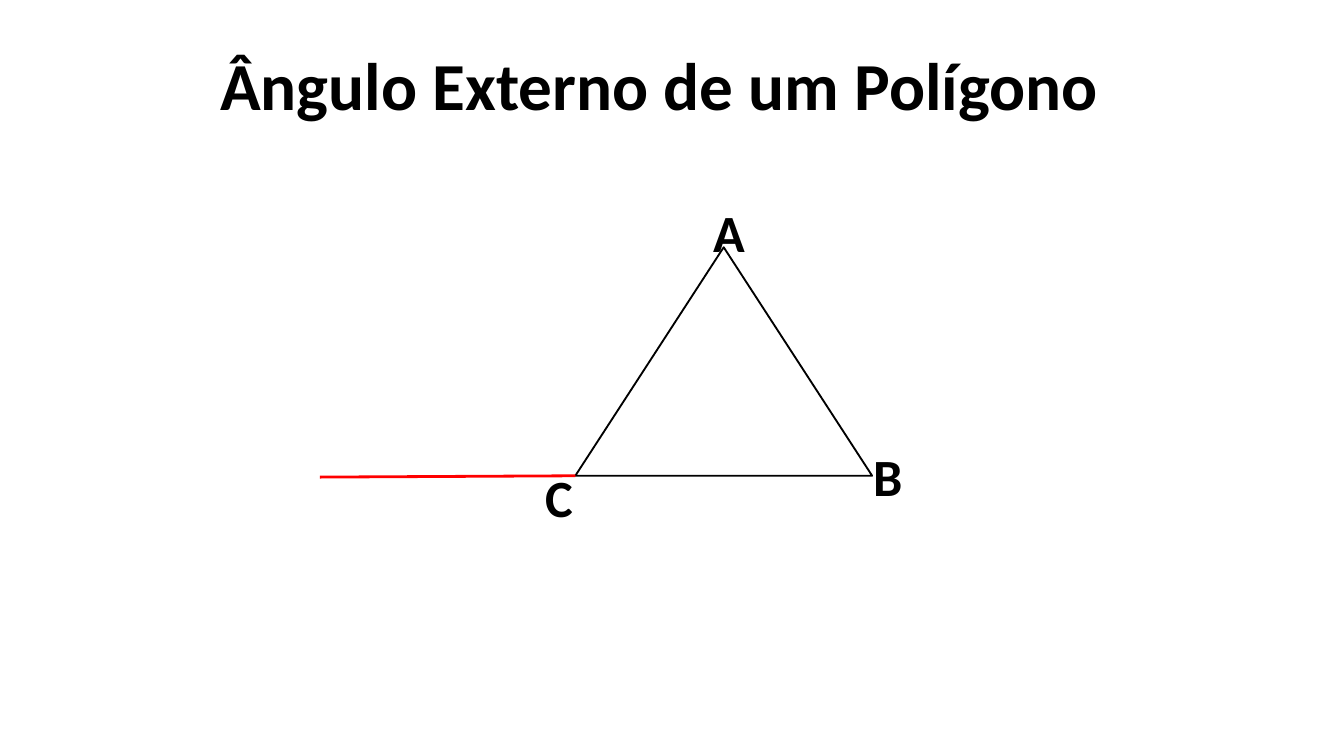
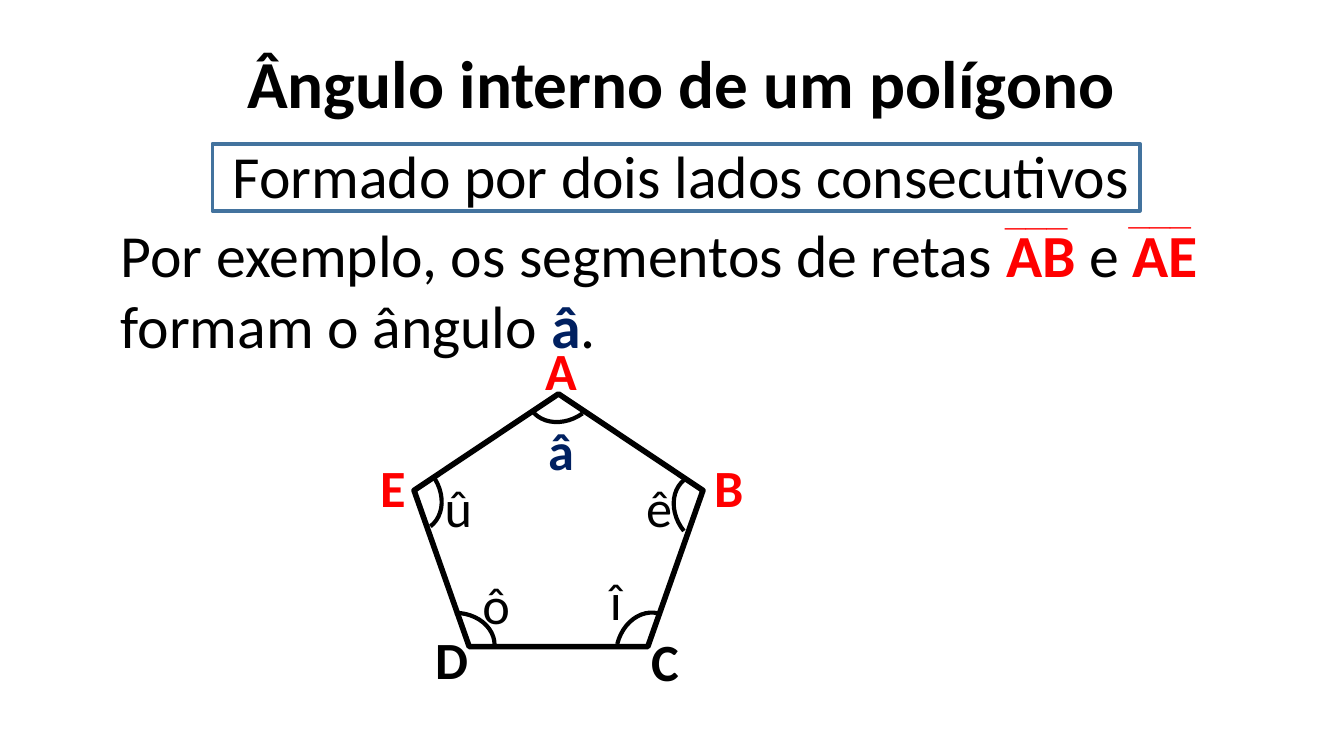
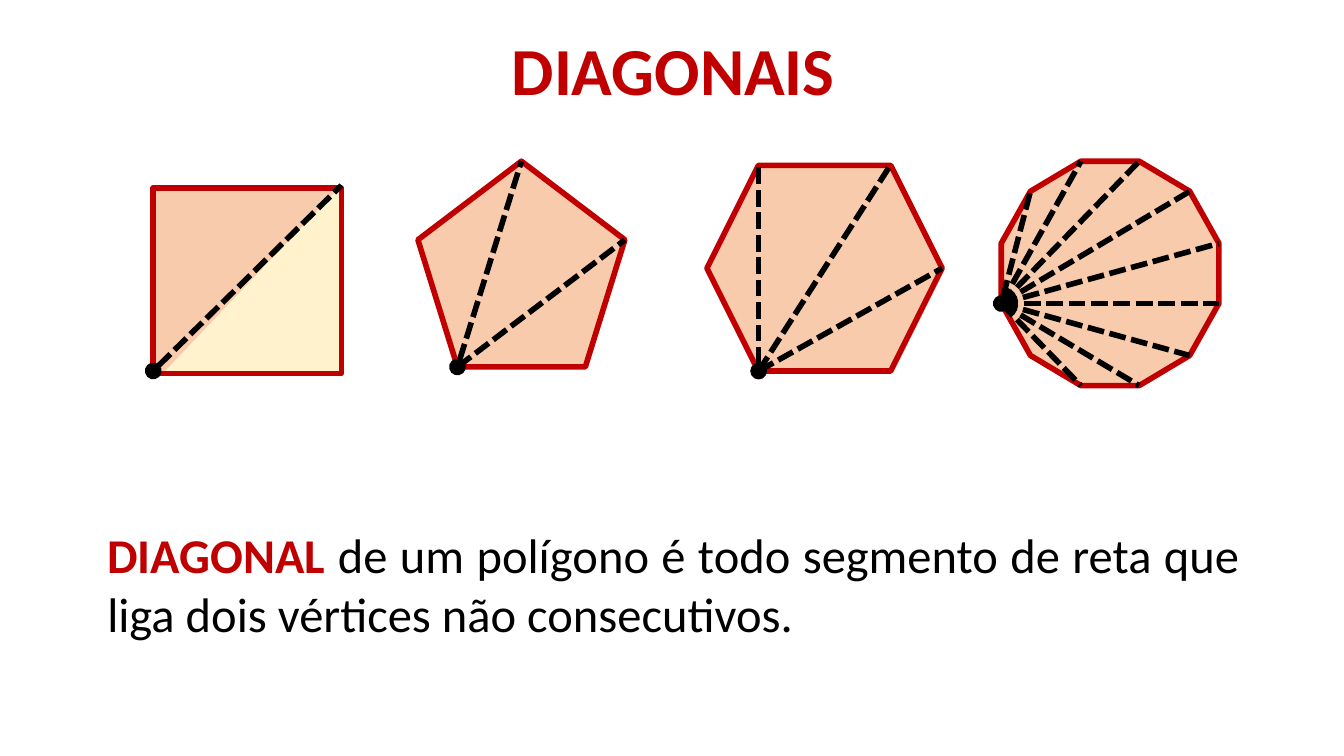
from lxml.etree import SubElement
from pptx import Presentation
from pptx.dml.color import RGBColor
from pptx.enum.dml import MSO_LINE
from pptx.enum.shapes import MSO_CONNECTOR, MSO_SHAPE
from pptx.enum.text import MSO_ANCHOR, MSO_AUTO_SIZE, PP_ALIGN
from pptx.oxml.ns import qn
from pptx.util import Pt

BLACK, RED, NAVY = "000000", "FF0000", "002060"
DARK_RED, PEACH, CREAM, BLUE = "C00000", "F8CBAD", "FFF2CC", "43739E"
TITLE_ONLY = 5
LABEL_HEIGHT = 41


def color(value):
    return RGBColor.from_string(value)


def points(lengths):
    return [Pt(length) for length in lengths]


def set_values(target, values):
    for name, value in values.items():
        setattr(target, name, value)


class Deck:
    """Holds the shared style and the current slide."""

    font = {"name": "Calibri", "size": Pt(28), "bold": False}
    title_font = {"size": Pt(36), "bold": True}
    frame = {"auto_size": MSO_AUTO_SIZE.SHAPE_TO_FIT_TEXT, "vertical_anchor": MSO_ANCHOR.TOP,
             "margin_left": Pt(7.2), "margin_right": Pt(7.2),
             "margin_top": Pt(3.6), "margin_bottom": Pt(3.6)}

    def __init__(self):
        self.presentation = Presentation()
        set_values(self.presentation, {"slide_width": Pt(720), "slide_height": Pt(405)})
        self.slide = None

    def fill_text(self, shape, runs, align=PP_ALIGN.LEFT, wrap=True, **font):
        """Fill a shape with one paragraph of (text, format) runs."""
        set_values(shape.text_frame, {**self.frame, "word_wrap": wrap})
        paragraph = shape.text_frame.paragraphs[0]
        set_values(paragraph, {"alignment": align, "line_spacing": 1.0})
        for text, changes in runs:
            values = {**self.font, **font, **changes}
            fill = values.pop("color", BLACK)
            outline = values.pop("outline", None)
            run = paragraph.add_run()
            run.text = text
            set_values(run.font, values)
            run.font.color.rgb = color(fill)
            if outline:
                self.outline(run, outline)

    def outline(self, run, value):
        properties = run.font._element
        line = SubElement(properties, qn("a:ln"), w=str(Pt(0.75)))
        fill = SubElement(line, qn("a:solidFill"))
        SubElement(fill, qn("a:srgbClr"), val=value)
        properties.insert(0, line)

    def new_slide(self, title, box, align=PP_ALIGN.CENTER, wrap=True, **font):
        layout = self.presentation.slide_layouts[TITLE_ONLY]
        self.slide = self.presentation.slides.add_slide(layout)
        shape = self.slide.shapes.title
        set_values(shape, dict(zip(("left", "top", "width", "height"), points(box))))
        self.fill_text(shape, [(title, font)], align, wrap, **self.title_font)

    def text(self, box, runs, align=PP_ALIGN.LEFT, wrap=True, **font):
        shape = self.slide.shapes.add_textbox(*points(box))
        self.fill_text(shape, runs, align, wrap, **font)

    def label(self, letter, left, top, width, **font):
        self.text((left, top, width, LABEL_HEIGHT), [(letter, font)], wrap=False)

    def shape(self, kind, box, line=None, width=1, fill=None, rotation=0):
        shape = self.slide.shapes.add_shape(kind, *points(box))
        shape.shadow.inherit = False
        shape.rotation = rotation
        for part, value in ((shape.fill, fill), (shape.line.fill, line)):
            if value:
                part.solid()
                part.fore_color.rgb = color(value)
            else:
                part.background()
        if line:
            shape.line.width = Pt(width)
        return shape

    def line(self, start, end, value, width, dash=None, dot=False):
        connector = self.slide.shapes.add_connector(
            MSO_CONNECTOR.STRAIGHT, *points((*start, *end)))
        connector.line.color.rgb = color(value)
        set_values(connector.line, {"width": Pt(width), "dash_style": dash})
        properties = connector._element.spPr
        if dot:
            SubElement(properties.find(qn("a:ln")), qn("a:headEnd"), type="oval")
        SubElement(properties, qn("a:effectLst"))

    def diagonals(self, box, vertex, targets):
        """Dashed lines from one vertex; vertices are fractions of the box."""
        left, top, width, height = box
        start, *ends = [(left + x * width, top + y * height) for x, y in (vertex, *targets)]
        for index, end in enumerate(ends):
            self.line(start, end, BLACK, 3, MSO_LINE.SQUARE_DOT, dot=index == 0)


def external_angle(deck):
    deck.new_slide("Ângulo Externo de um Polígono", (50.4, 19.4, 605.5, 51))
    deck.shape(MSO_SHAPE.ISOSCELES_TRIANGLE, (308.2, 132.5, 159, 122.4), BLACK)
    for letter, left, top, width in (
            ("C", 285.1, 245.5, 29.5), ("B", 460.8, 234.7, 30.2), ("A", 375.1, 103.7, 31.7)):
        deck.label(letter, left, top, width, bold=True)
    deck.line((308.2, 254.9), (171.4, 255.6), RED, 1.5)


def internal_angle(deck):
    deck.new_slide("Ângulo interno de um polígono", (125.3, 18.7, 484.6, 51),
                   PP_ALIGN.LEFT, wrap=False)
    # Definition
    deck.text((69, 70.6, 591.8, 46), [("Formado por dois lados consecutivos", {})],
              PP_ALIGN.CENTER, size=Pt(32))
    deck.shape(MSO_SHAPE.RECTANGLE, (113.8, 77, 496.8, 36), BLUE, 2)

    # Pentagon with its angle arcs
    deck.shape(MSO_SHAPE.REGULAR_PENTAGON, (221.8, 211, 154.8, 135.4), BLACK, 3)
    for left, top, rotation in (
            (358.6, 256.3, 231.2), (222.5, 328.3, 0), (196.6, 247.7, 53.1),
            (280.8, 190.1, 144.4), (326.2, 331.9, 283.9)):
        deck.shape(MSO_SHAPE.ARC, (left, top, 42.5, 34.6), BLACK, 2.25, rotation=rotation)

    # Angle and vertex names
    for letter, left, top, width, value, bold in (
            ("ê", 339.1, 251.3, 28.8, BLACK, False), ("â", 286.6, 220.3, 28.8, NAVY, True),
            ("î", 319.7, 301, 20.9, BLACK, False), ("û", 231.1, 251.3, 29.5, BLACK, False),
            ("ô", 251.3, 303.1, 29.5, BLACK, False), ("A", 285.1, 177.8, 31.7, RED, True),
            ("B", 375.8, 240.5, 30.2, RED, True), ("C", 342, 333.4, 29.5, BLACK, True),
            ("D", 226.1, 332.6, 32.4, BLACK, True), ("E", 196.6, 240.5, 28.1, RED, True)):
        deck.label(letter, left, top, width, color=value, bold=bold)

    # Example, with a bar over each segment name
    segment = {"color": RED, "bold": True}
    deck.text((57.6, 113, 598.3, 85), [
        ("Por exemplo, os segmentos de retas ", {}), ("AB", segment), (" e ", {}),
        ("AE", segment), (" formam o ângulo ", {}), ("â", {"color": NAVY, "bold": True}),
        (".", {})], size=Pt(32))
    for left, top in ((531.4, 97.2), (597.6, 96.5)):
        deck.text((left, top, 74.2, 31.7), [("___", segment)], name="Arial", size=Pt(20))


def diagonals(deck):
    accent = {"color": DARK_RED, "outline": DARK_RED}
    deck.new_slide("DIAGONAIS", (134.6, 11.5, 452.2, 51), **accent)

    # Polygons: kind, box, common vertex, opposite vertices
    square = (82.1, 100.8, 100.8, 99.4)
    a, b = 0.134, 0.366
    polygons = (
        (MSO_SHAPE.RECTANGLE, square, (0, 0.985), [(1, -0.015)]),
        (MSO_SHAPE.REGULAR_PENTAGON, (223.9, 86.4, 110.9, 110.2), (0.191, 1),
         [(0.5, 0), (1, 0.382)]),
        (MSO_SHAPE.HEXAGON, (378.7, 88.6, 126, 110.2), (0.22, 1),
         [(0.22, 0), (0.78, 0), (1, 0.5)]),
        (MSO_SHAPE.DODECAGON, (536.4, 86.4, 116.6, 120.2), (0, 1 - b),
         [(a, a), (b, 0), (1 - b, 0), (1 - a, a), (1, b), (1, 1 - b),
          (1 - a, 1 - a), (1 - b, 1), (b, 1)]),
    )
    for kind, box, vertex, targets in polygons:
        deck.shape(kind, box, DARK_RED, 3, PEACH)
        if box == square:
            half = deck.shape(MSO_SHAPE.RIGHT_TRIANGLE, (88.6, 100.8, 92.9, 97.9), fill=CREAM)
            half._element.spPr.xfrm.set("flipH", "1")
        deck.diagonals(box, vertex, targets)

    # Definition
    deck.text((50.4, 277.9, 621.4, 70.6), [
        ("DIAGONAL", {**accent, "bold": True}),
        (" de um polígono é todo segmento de reta que liga dois vértices não consecutivos.", {})],
        PP_ALIGN.JUSTIFY, size=Pt(26))


def main():
    deck = Deck()
    for build in (external_angle, internal_angle, diagonals):
        build(deck)
    deck.presentation.save("out.pptx")


if __name__ == "__main__":
    main()
